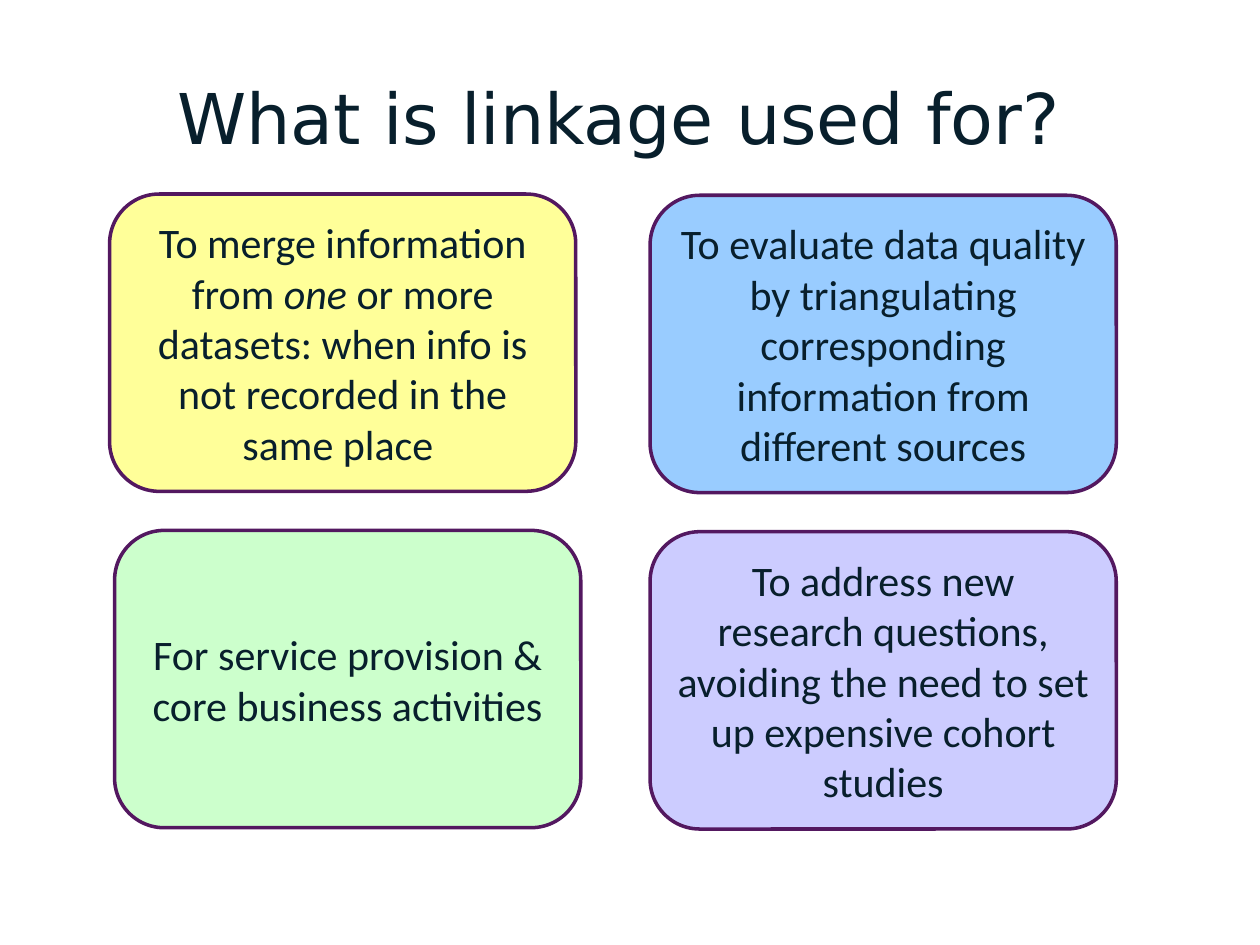
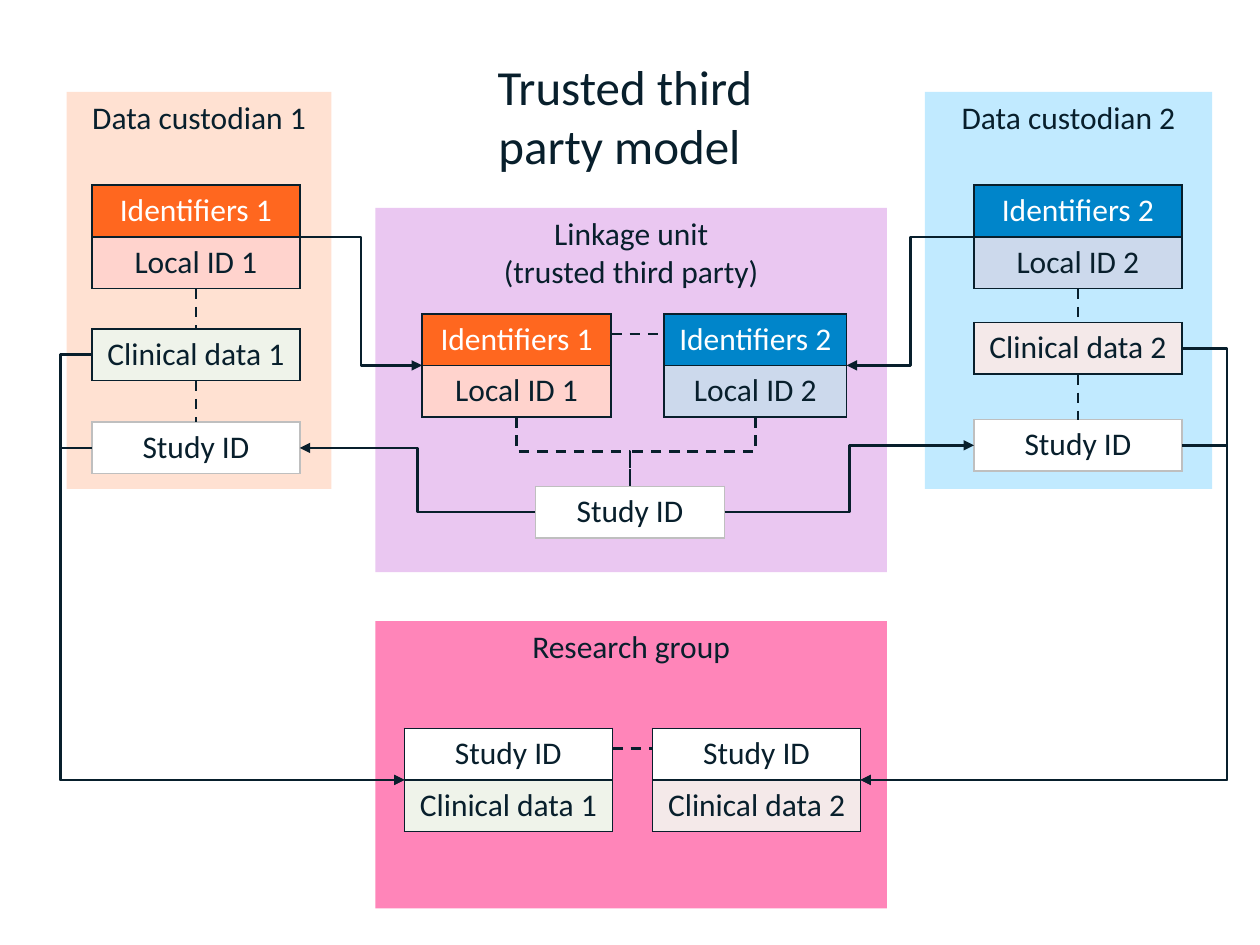
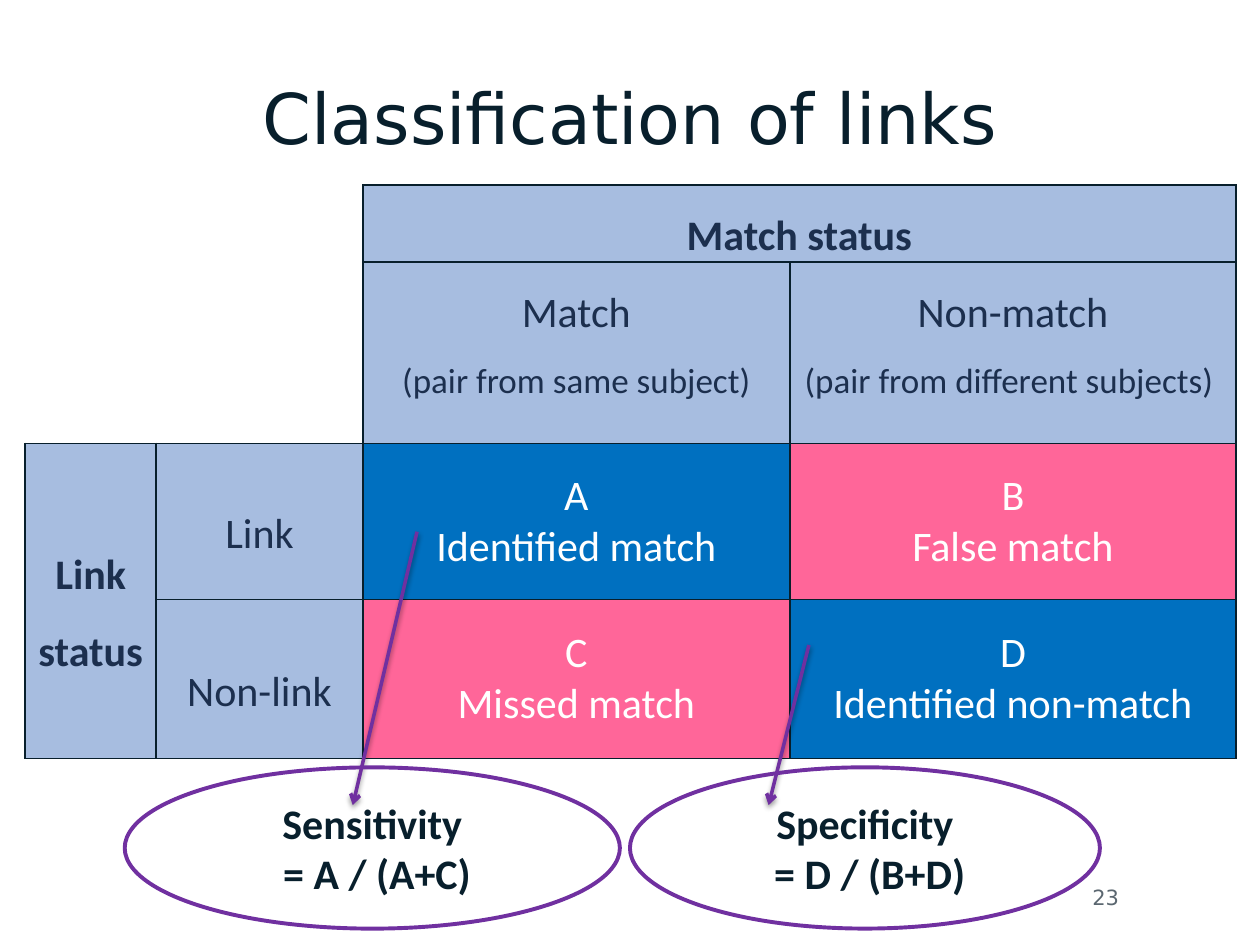
"""Build three slides on data linkage: uses, trusted third party model, link classification."""
from lxml import etree
from pptx import Presentation
from pptx import util as u
from pptx.dml.color import RGBColor
from pptx.enum import dml, shapes, text
from pptx.oxml import ns

INK, WHITE, GREY, PURPLE = "081F2C", "FFFFFF", "BFBFBF", "7030A0"
HEAD_FONT, BODY_FONT = "DejaVu Sans", "Calibri"
TOP, LEFT, BOTTOM, RIGHT = range(4)
ROW = 0.41
STUDY = ("Study ID", WHITE, INK)
IDENTIFIERS = {1: ("Identifiers 1", "FF671F", WHITE), 2: ("Identifiers 2", "0085CA", WHITE)}
LOCAL = {1: ("Local ID 1", "FFD3CD", INK), 2: ("Local ID 2", "CCD9EC", INK)}
CLINICAL = {1: ("Clinical data 1", "EFF3EA", INK), 2: ("Clinical data 2", "F4E9E9", INK)}


def rgb(value):
    """Turn a hex string into a colour."""
    return RGBColor.from_string(value)


def inches(*values):
    """Turn numbers into lengths."""
    return [u.Inches(v) for v in values]


def sub(parent, tag, **attrs):
    """Append a DrawingML element."""
    return etree.SubElement(parent, ns.qn("a:" + tag), attrs)


def style(p, size, color=INK, font=BODY_FONT, bold=False, align=text.PP_ALIGN.CENTER):
    """Format a whole paragraph."""
    p.alignment = align
    p.font.size, p.font.name, p.font.bold = u.Pt(size), font, bold
    p.font.color.rgb = rgb(color)


def write(tf, lines, size, anchor=text.MSO_ANCHOR.TOP, wrap=True, **look):
    """Fill a text frame with one paragraph for each line."""
    tf.word_wrap, tf.vertical_anchor = wrap, anchor
    for i, line in enumerate(lines):
        p = tf.add_paragraph() if i else tf.paragraphs[0]
        p.text = line
        style(p, size, **look)


def add_slide(prs, title, box=(0.5, 0.3, 9, 1.25), size=40, font=HEAD_FONT,
              anchor=text.MSO_ANCHOR.MIDDLE):
    """Add a slide with a formatted title."""
    s = prs.slides.add_slide(prs.slide_layouts[5])
    sp = s.shapes.title
    sp.left, sp.top, sp.width, sp.height = inches(*box)
    write(sp.text_frame, [title], size, anchor, font=font)
    sp.text_frame.auto_size = text.MSO_AUTO_SIZE.NONE
    return s


def add_box(s, kind, box, fill=None, line=None, width=2):
    """Add a preset shape without shadow."""
    sp = s.shapes.add_shape(kind, *inches(*box))
    sp.shadow.inherit = False
    if fill:
        sp.fill.solid()
        sp.fill.fore_color.rgb = rgb(fill)
    else:
        sp.fill.background()
    if line:
        sp.line.color.rgb, sp.line.width = rgb(line), u.Pt(width)
    else:
        sp.line.fill.background()
    return sp


def paint(cell, fill, borders):
    """Set the borders (left, right, top, bottom) and the fill of a cell."""
    tcPr = cell._tc.get_or_add_tcPr()
    for side, color in zip("LRTB", borders):
        ln = sub(tcPr, "ln" + side, w=str(u.Pt(1)))
        sub(sub(ln, "solidFill"), "srgbClr", val=color)
    if fill:
        cell.fill.solid()
        cell.fill.fore_color.rgb = rgb(fill)
    else:
        cell.fill.background()


def add_grid(s, left, top, widths, heights):
    """Add a table without banding."""
    frame = s.shapes.add_table(len(heights), len(widths),
                               *inches(left, top, sum(widths), sum(heights)))
    tbl = frame.table
    tbl.first_row = tbl.horz_banding = False
    for col, width in zip(tbl.columns, widths):
        col.width = u.Inches(width)
    for row, height in zip(tbl.rows, heights):
        row.height = u.Inches(height)
    return frame


def add_record(s, left, top, width, *fields):
    """Add a one-column table of data fields."""
    frame = add_grid(s, left, top, [width], [ROW] * len(fields))
    border = GREY if fields == (STUDY,) else INK
    for cell, (label, fill, color) in zip(frame.table.iter_cells(), fields):
        paint(cell, fill, [border] * 4)
        write(cell.text_frame, [label], 18, color=color)
    return frame


def port(sp, side):
    """Return the middle of one side of a shape."""
    x = {LEFT: 0, RIGHT: sp.width}.get(side, sp.width // 2)
    y = {TOP: 0, BOTTOM: sp.height}.get(side, sp.height // 2)
    return sp.left + x, sp.top + y


def add_line(s, start, end, kind=shapes.MSO_CONNECTOR.STRAIGHT, color=INK, width=1.5,
             dash=False, tail=None, shadow=False):
    """Add a connector, with a dash, an arrowhead or a shadow if asked."""
    c = s.shapes.add_connector(kind, *start, *end)
    c.line.color.rgb, c.line.width = rgb(color), u.Pt(width)
    if dash:
        c.line.dash_style = dml.MSO_LINE.DASH
    if tail:
        sub(c.line._get_or_add_ln(), "tailEnd", type=tail)
    effects = sub(c._element.spPr, "effectLst")
    if shadow:
        cast = sub(effects, "outerShdw", blurRad=str(u.Pt(3.1)), dist=str(u.Pt(1.6)),
                   dir="5400000", rotWithShape="0")
        sub(sub(cast, "srgbClr", val="000000"), "alpha", val="38000")
    return c


def tie(s, upper, lower):
    """Join two stacked records with a dashed line."""
    c = add_line(s, port(upper, BOTTOM), port(lower, TOP), dash=True)
    c.begin_connect(upper, BOTTOM)
    c.end_connect(lower, TOP)


def pair(s, first, second):
    """Join the top rows of two neighbouring records with a dashed line."""
    y = first.top + u.Inches(0.16)
    add_line(s, (first.left + first.width, y), (second.left, y), dash=True)


def send(s, source, source_side, target, target_side, via=None):
    """Draw an elbow arrow that turns at the given x, or halfway."""
    start, end = port(source, source_side), port(target, target_side)
    c = add_line(s, start, end, shapes.MSO_CONNECTOR.ELBOW, tail="triangle")
    if via is not None:
        share = (u.Inches(via) - start[0]) / (end[0] - start[0])
        guides = c._element.spPr.find(".//" + ns.qn("a:avLst"))
        sub(guides, "gd", name="adj1", fmla=f"val {round(share * 100000)}")


def merge(s, source, target):
    """Draw a dashed elbow that leaves downwards and enters from above."""
    (x1, y1), (x2, y2) = port(source, BOTTOM), port(target, TOP)
    mid_x, mid_y = (x1 + x2) // 2, (y1 + y2) // 2
    half_w, half_h = (y2 - y1) // 2, abs(x2 - x1) // 2
    turn = 270 if x2 > x1 else 90
    if turn == 270:
        half_w = -half_w
    c = add_line(s, (mid_x - half_w, mid_y - half_h), (mid_x + half_w, mid_y + half_h),
                 shapes.MSO_CONNECTOR.ELBOW, dash=True)
    c._element.spPr.find(ns.qn("a:xfrm")).set("rot", str(turn * 60000))


def add_panel(s, box, fill, *heading):
    """Add the coloured area of one organisation."""
    sp = add_box(s, shapes.MSO_SHAPE.RECTANGLE, box, fill)
    write(sp.text_frame, heading, 18, wrap=False)


def custodian(s, number, box, fill, indent, clinical_drop, study_drop):
    """Draw a data custodian and return its three records."""
    left, top = box[:2]
    add_panel(s, box, fill, f"Data custodian {number}")
    stacks = ((0.74, (IDENTIFIERS[number], LOCAL[number])),
              (clinical_drop, (CLINICAL[number],)), (study_drop, (STUDY,)))
    records = [add_record(s, left + indent, top + drop, 1.65, *fields)
               for drop, fields in stacks]
    for upper, lower in zip(records, records[1:]):
        tie(s, upper, lower)
    return records


def linkage_unit(s, left, top):
    """Draw the linkage unit and return its identifier records and study ID."""
    add_panel(s, (left, top, 4.06, 2.89), "EAC7F1", "Linkage unit", "(trusted third party)")
    first = add_record(s, left + 0.37, top + 0.84, 1.5, IDENTIFIERS[1], LOCAL[1])
    second = add_record(s, left + 2.29, top + 0.84, 1.45, IDENTIFIERS[2], LOCAL[2])
    study = add_record(s, left + 1.27, top + 2.21, 1.5, STUDY)
    pair(s, first, second)
    for record in (first, second):
        merge(s, record, study)
    return first, second, study


def research_group(s, left, top):
    """Draw the research group and return its two records."""
    add_panel(s, (left, top, 4.06, 2.28), "FF85B9", "Research group")
    records = [add_record(s, left + x, top + 0.85, 1.65, STUDY, CLINICAL[n])
               for n, x in ((1, 0.23), (2, 2.2))]
    pair(s, *records)
    return records


def uses_slide(prs):
    """Show four uses of linkage as rounded cards."""
    s = add_slide(prs, "What is linkage used for? ")
    cards = (
        (0.87, 1.54, "FFFF99", ("To merge information from ", "one",
                                " or more datasets: when info is not recorded in the same place ")),
        (5.16, 1.55, "99CCFF", ("To evaluate data quality by triangulating corresponding "
                                "information from different sources",)),
        (0.91, 4.21, "CCFFCC", ("For service provision & core business activities",)),
        (5.16, 4.22, "CCCCFF", ("To address new research questions, avoiding the need to "
                                "set up expensive cohort studies",)),
    )
    for left, top, fill, parts in cards:
        sp = add_box(s, shapes.MSO_SHAPE.ROUNDED_RECTANGLE, (left, top, 3.7, 2.36),
                     fill, "531860")
        write(sp.text_frame, [""], 24, text.MSO_ANCHOR.MIDDLE)
        for part in parts:
            r = sp.text_frame.paragraphs[0].add_run()
            r.text = part
            if part == "one":
                r.font.italic = True


def model_slide(prs):
    """Show how records flow between custodians, linkage unit and researchers."""
    s = add_slide(prs, "Trusted third party model ", (3.62, 0.4, 2.68, 1.04), 28,
                  BODY_FONT, text.MSO_ANCHOR.TOP)
    *linked, key = linkage_unit(s, 2.98, 1.65)
    results = research_group(s, 2.98, 4.93)
    sides = (
        (custodian(s, 1, (0.53, 0.73, 2.1, 3.15), "FFE1D2", 0.2, 1.88, 2.62), LEFT, RIGHT, 0.48),
        (custodian(s, 2, (7.34, 0.73, 2.28, 3.15), "C1EAFF", 0.39, 1.83, 2.6), RIGHT, LEFT, 9.74),
    )
    for (ids, clinical, study), outer, inner, via in sides:
        number = 0 if outer == LEFT else 1
        send(s, ids, inner, linked[number], outer)
        send(s, key, outer, study, inner)
        for record in (clinical, study):
            send(s, record, outer, results[number], outer, via)


def status_table(s, left, top):
    """Add the table of link status against match status."""
    pale, navy, blue, pink = "A7BDE0", "1C2F4E", "0070C0", "FF6699"
    tbl = add_grid(s, left, top, [1.04, 1.64, 3.39, 3.54], [0.61, 1.44, 1.24, 1.26]).table
    for first, last in (((0, 0), (1, 1)), ((0, 2), (0, 3)), ((2, 0), (3, 0))):
        tbl.cell(*first).merge(tbl.cell(*last))
    fills = {(2, 2): blue, (3, 3): blue, (2, 3): pink, (3, 2): pink}
    labels = {
        (0, 2): ["Match status"],
        (1, 2): ["Match", "(pair from same subject)"],
        (1, 3): ["Non-match", "(pair from different subjects) "],
        (2, 0): ["Link status"], (2, 1): ["Link"], (3, 1): ["Non-link"],
        (2, 2): ["A\vIdentified match"], (2, 3): ["B\vFalse match"],
        (3, 2): ["C\vMissed match"], (3, 3): ["D\vIdentified non-match"],
    }
    for row in range(4):
        for col in range(4):
            cell, place = tbl.cell(row, col), (row, col)
            blank = row < 2 and col < 2
            edge = WHITE if blank else INK
            paint(cell, None if blank else fills.get(place, pale), (edge, INK, edge, INK))
            if place not in labels:
                continue
            cell.margin_left = cell.margin_right = u.Inches(0.07)
            cell.margin_top = cell.margin_bottom = 0
            cell.vertical_anchor = text.MSO_ANCHOR.TOP if row == 1 else text.MSO_ANCHOR.MIDDLE
            write(cell.text_frame, labels[place], 24, None,
                  color=WHITE if place in fills else navy, bold=place in ((0, 2), (2, 0)))
            for i, p in enumerate(cell.text_frame.paragraphs):
                if place not in fills:
                    p.line_spacing = 1.5
                if i:
                    p.font.size = u.Pt(20)


def classification_slide(prs):
    """Show the status table with the two measures drawn from it."""
    s = add_slide(prs, "Classification of links")
    number = s.shapes.add_textbox(*inches(7.83, 6.95, 1.15, 0.34))
    write(number.text_frame, ["23"], 12, text.MSO_ANCHOR.MIDDLE, color="5B6770",
          font=HEAD_FONT, align=text.PP_ALIGN.RIGHT)
    status_table(s, 0.2, 1.47)
    measures = (
        (0.99, 3.93, ["Sensitivity", " = A / (A+C)"], (3.31, 4.22), (2.8, 6.39)),
        (5, 3.73, ["Specificity", " = D / (B+D)"], (6.42, 5.12), (6.1, 6.39)),
    )
    for left, width, lines, start, end in measures:
        add_line(s, inches(*start), inches(*end), color=PURPLE, width=2, tail="arrow",
                 shadow=True)
        sp = add_box(s, shapes.MSO_SHAPE.OVAL, (left, 6.09, width, 1.28), line=PURPLE, width=2.25)
        write(sp.text_frame, lines, 24, bold=True)


def main():
    """Build and save the slides."""
    prs = Presentation()
    prs.slide_width, prs.slide_height = inches(10, 7.5)
    for build in (uses_slide, model_slide, classification_slide):
        build(prs)
    prs.save("out.pptx")


if __name__ == "__main__":
    main()
